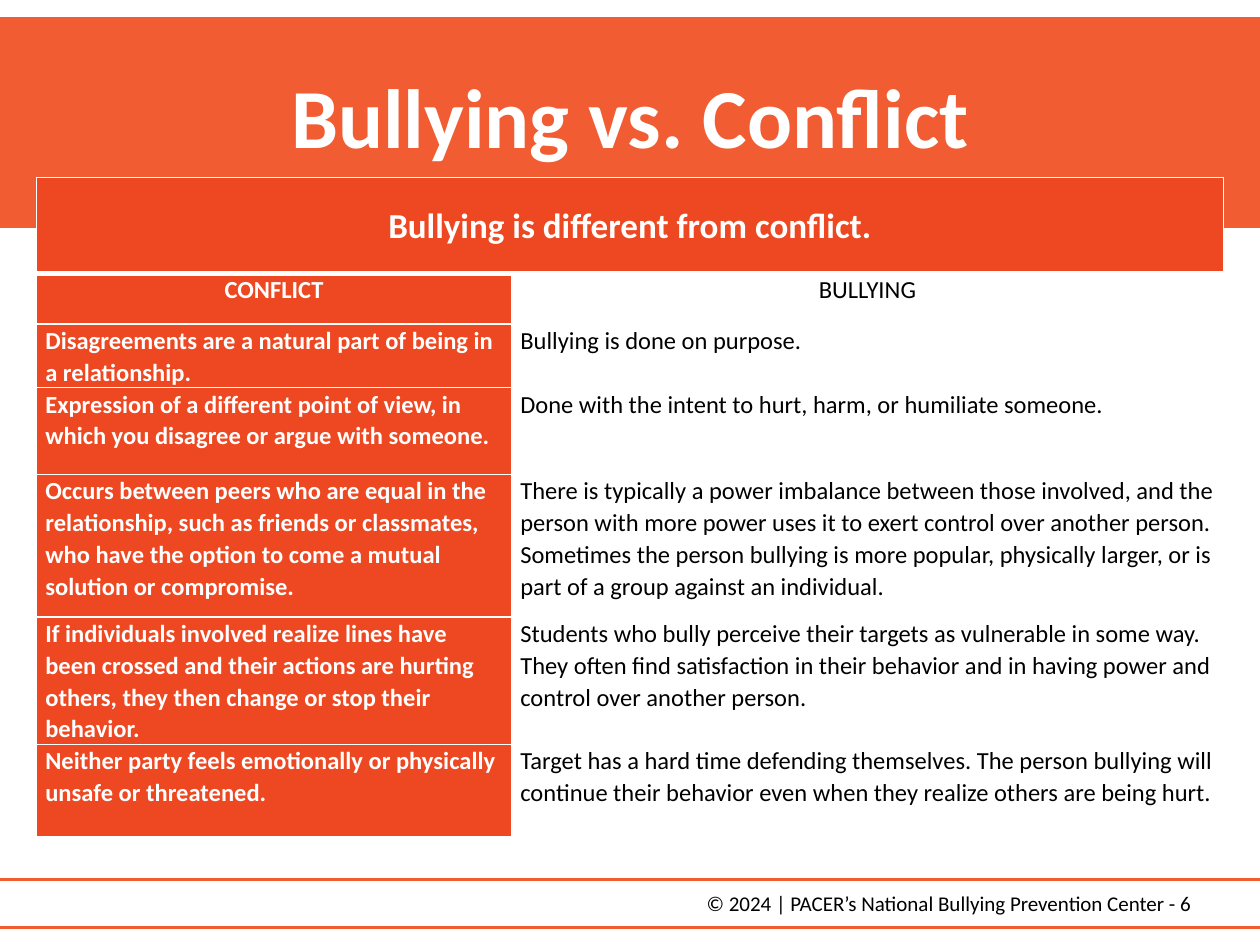
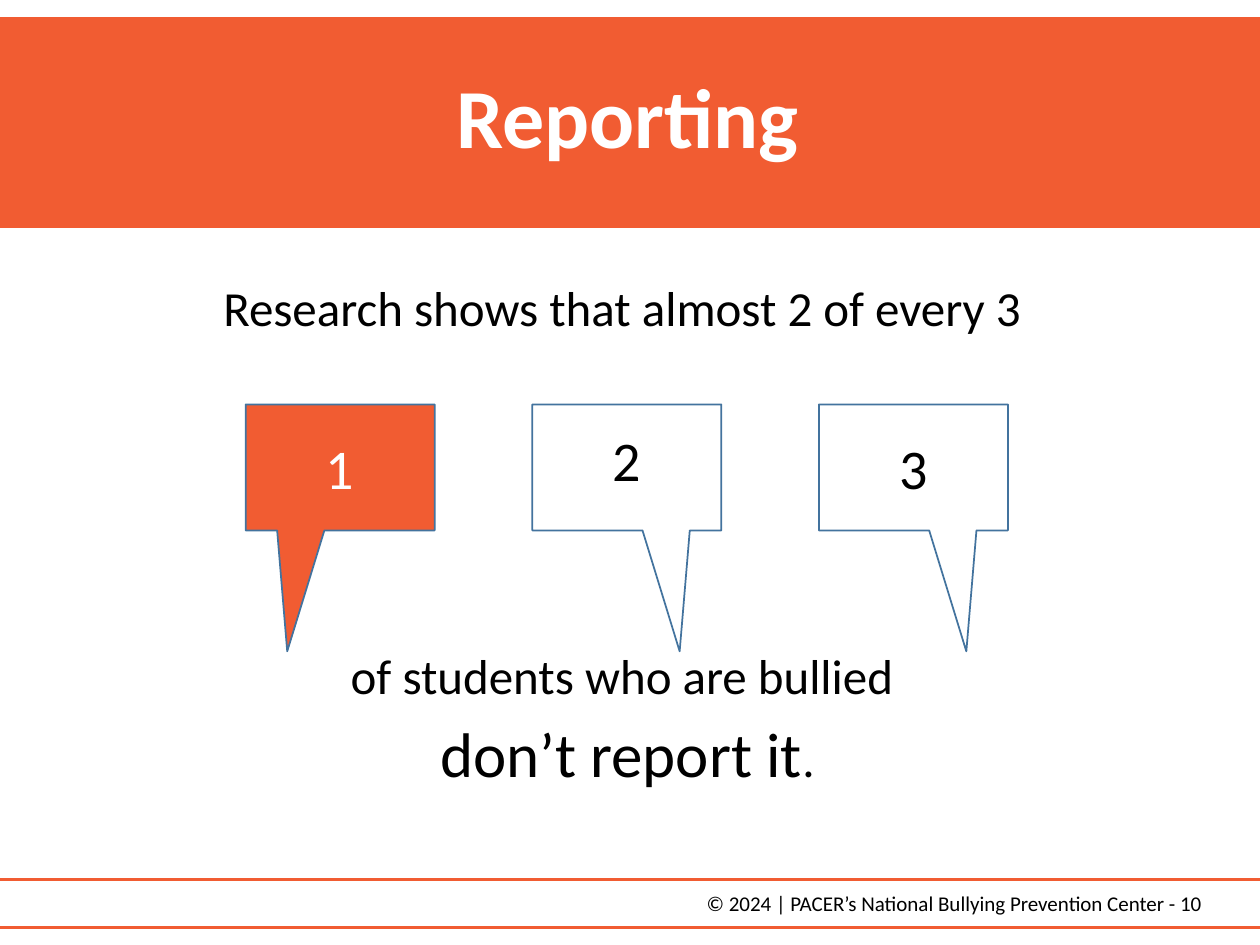
import pptx
import pptx.util
import pptx.dml.color
import pptx.enum.shapes
import pptx.enum.text
import pptx.oxml
import pptx.oxml.ns
from lxml import etree

Inches = pptx.util.Inches
Pt = pptx.util.Pt
ALIGN = pptx.enum.text.PP_ALIGN
ANCHOR = pptx.enum.text.MSO_ANCHOR
SHAPE = pptx.enum.shapes.MSO_SHAPE

ORANGE = "F15C32"
RED = "ED4821"
BLUE = "43739E"
WHITE = "FFFFFF"
BLACK = "000000"


def color(value):
    return pptx.dml.color.RGBColor.from_string(value)


def format_paragraph(paragraph, size, text_color, align=ALIGN.LEFT, bold=False, spacing=1.0):
    paragraph.alignment = align
    paragraph.line_spacing = spacing
    for run in paragraph.runs:
        run.font.name = "Calibri"
        run.font.size = Pt(size)
        run.font.bold = bold
        run.font.color.rgb = color(text_color)


presentation = pptx.Presentation()
presentation.slide_width = Inches(10)
presentation.slide_height = Inches(7.5)

slides = []
for heading, number, title_left, title_width in [
    ("Bullying vs. Conflict", 6, 0.69, 8.62),
    ("Reporting", 10, 0.21, 9.54),
]:
    slide = presentation.slides.add_slide(presentation.slide_layouts[5])
    slides.append(slide)

    footer = slide.shapes.add_textbox(Inches(5.51), Inches(7.02), Inches(4.3), Inches(0.4))
    footer.text_frame.word_wrap = True
    footer.text_frame.text = f"© 2024 | PACER’s National Bullying Prevention Center - {number}"
    format_paragraph(footer.text_frame.paragraphs[0], 12, BLACK)

    for rule_top in (6.98, 7.36):
        rule = slide.shapes.add_connector(
            pptx.enum.shapes.MSO_CONNECTOR.STRAIGHT,
            Inches(0), Inches(rule_top), Inches(10), Inches(rule_top),
        )
        rule.line.color.rgb = color(ORANGE)
        rule.line.width = Pt(1.5)
        etree.SubElement(rule.element.spPr, pptx.oxml.ns.qn("a:effectLst"))

    band = slide.shapes.add_shape(SHAPE.RECTANGLE, Inches(0), Inches(0.14), Inches(10), Inches(1.66))
    band.shadow.inherit = False
    band.fill.solid()
    band.fill.fore_color.rgb = color(ORANGE)
    band.line.color.rgb = color(ORANGE)
    band.line.width = Pt(1)

    title = slide.shapes.title
    title.left, title.top = Inches(title_left), Inches(0.24)
    title.width, title.height = Inches(title_width), Inches(1.45)
    title.text_frame.text = heading
    title.text_frame.vertical_anchor = ANCHOR.MIDDLE
    format_paragraph(title.text_frame.paragraphs[0], 48, WHITE, ALIGN.CENTER, True, 0.9)
    band.element.addnext(title.element)

comparison_slide, reporting_slide = slides

comparison = [
    ("Bullying is different from conflict.", ""),
    ("CONFLICT", "BULLYING"),
    ("Disagreements are a natural part of being in a relationship.",
     "Bullying is done on purpose."),
    ("Expression of a different point of view, in which you disagree or argue with someone.",
     "Done with the intent to hurt, harm, or humiliate someone."),
    ("Occurs between peers who are equal in the relationship, such as friends or classmates, "
     "who have the option to come a mutual solution or compromise.",
     "There is typically a power imbalance between those involved, and the person with more power "
     "uses it to exert control over another person. Sometimes the person bullying is more popular, "
     "physically larger, or is part of a group against an individual."),
    ("If individuals involved realize lines have been crossed and their actions are hurting others, "
     "they then change or stop their behavior.",
     "Students who bully perceive their targets as vulnerable in some way. They often find "
     "satisfaction in their behavior and in having power and control over another person."),
    ("Neither party feels emotionally or physically unsafe or threatened.",
     "Target has a hard time defending themselves. The person bullying will continue their behavior "
     "even when they realize others are being hurt."),
]
row_heights = [0.76, 0.4, 0.5, 0.69, 1.13, 1.01, 0.73]
table = comparison_slide.shapes.add_table(
    len(comparison), 2, Inches(0.29), Inches(1.41), Inches(9.42), Inches(sum(row_heights))
).table
for column, width in zip(table.columns, (3.77, 5.65)):
    column.width = Inches(width)

for row_index, (texts, height) in enumerate(zip(comparison, row_heights)):
    table.rows[row_index].height = Inches(height)
    for column_index, text in enumerate(texts):
        cell = table.cell(row_index, column_index)
        cell.margin_left = cell.margin_right = Inches(0.07)
        cell.margin_top = cell.margin_bottom = 0
        cell.text_frame.text = text
        is_banner = row_index == 0
        is_red = is_banner or column_index == 0
        format_paragraph(
            cell.text_frame.paragraphs[0],
            20 if is_banner else 14,
            WHITE if is_red else BLACK,
            ALIGN.CENTER if row_index < 2 else ALIGN.LEFT,
            is_red,
            1.07,
        )
        cell.vertical_anchor = ANCHOR.MIDDLE if is_banner else ANCHOR.TOP
        properties = cell._tc.get_or_add_tcPr()
        for side in "LRTB":
            thick = (row_index, side) in ((0, "B"), (1, "T"))
            properties.append(pptx.oxml.parse_xml(
                f'<a:ln{side} {pptx.oxml.ns.nsdecls("a")} w="{Pt(3 if thick else 1)}">'
                f'<a:solidFill><a:srgbClr val="{WHITE}"/></a:solidFill></a:ln{side}>'
            ))
        cell.fill.solid()
        cell.fill.fore_color.rgb = color(RED if is_red else WHITE)
table.cell(0, 0).merge(table.cell(0, 1))

for top, height, lines in [
    (2.21, 0.6, [[("Research shows that almost 2 of every 3 ", 28)]]),
    (5.13, 1.3, [[("of students who are bullied ", 28)], [("don’t report it", 36), (".", 28)]]),
]:
    statement = reporting_slide.shapes.add_textbox(Inches(0.65), Inches(top), Inches(8.66), Inches(height))
    text_frame = statement.text_frame
    text_frame.word_wrap = True
    for line_index, line in enumerate(lines):
        paragraph = text_frame.add_paragraph() if line_index else text_frame.paragraphs[0]
        for text, size in line:
            paragraph.add_run().text = text
        format_paragraph(paragraph, 28, BLACK, ALIGN.CENTER, spacing=0.9)
        for run, (text, size) in zip(paragraph.runs, line):
            run.font.size = Pt(size)
        if line_index:
            paragraph.space_before = Pt(10)

for index, (tail, text_color, bottom_inset) in enumerate(
    [(-0.28, WHITE, 0.05), (0.28, BLACK, 0.18), (0.28, BLACK, 0.05)]
):
    callout = reporting_slide.shapes.add_shape(
        SHAPE.RECTANGULAR_CALLOUT, Inches(1.95 + 2.275 * index), Inches(3.21), Inches(1.5), Inches(1)
    )
    callout.shadow.inherit = False
    callout.adjustments[0] = tail
    callout.adjustments[1] = 1.46
    if index == 0:
        callout.fill.solid()
        callout.fill.fore_color.rgb = color(ORANGE)
    else:
        callout.fill.background()
    callout.line.color.rgb = color(BLUE)
    callout.line.width = Pt(1)
    callout.text_frame.text = str(index + 1)
    callout.text_frame.vertical_anchor = ANCHOR.MIDDLE
    callout.text_frame.margin_bottom = Inches(bottom_inset)
    format_paragraph(callout.text_frame.paragraphs[0], 32, text_color, ALIGN.CENTER)

presentation.save("out.pptx")
